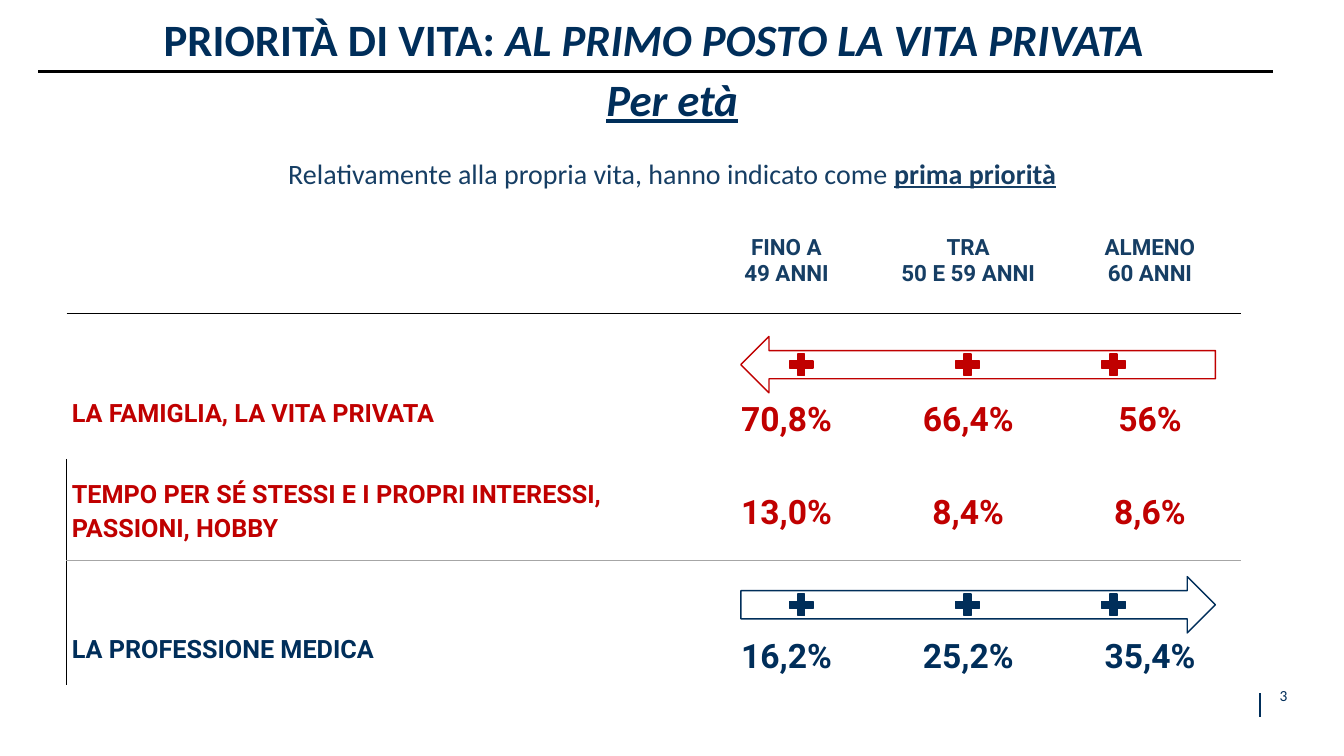
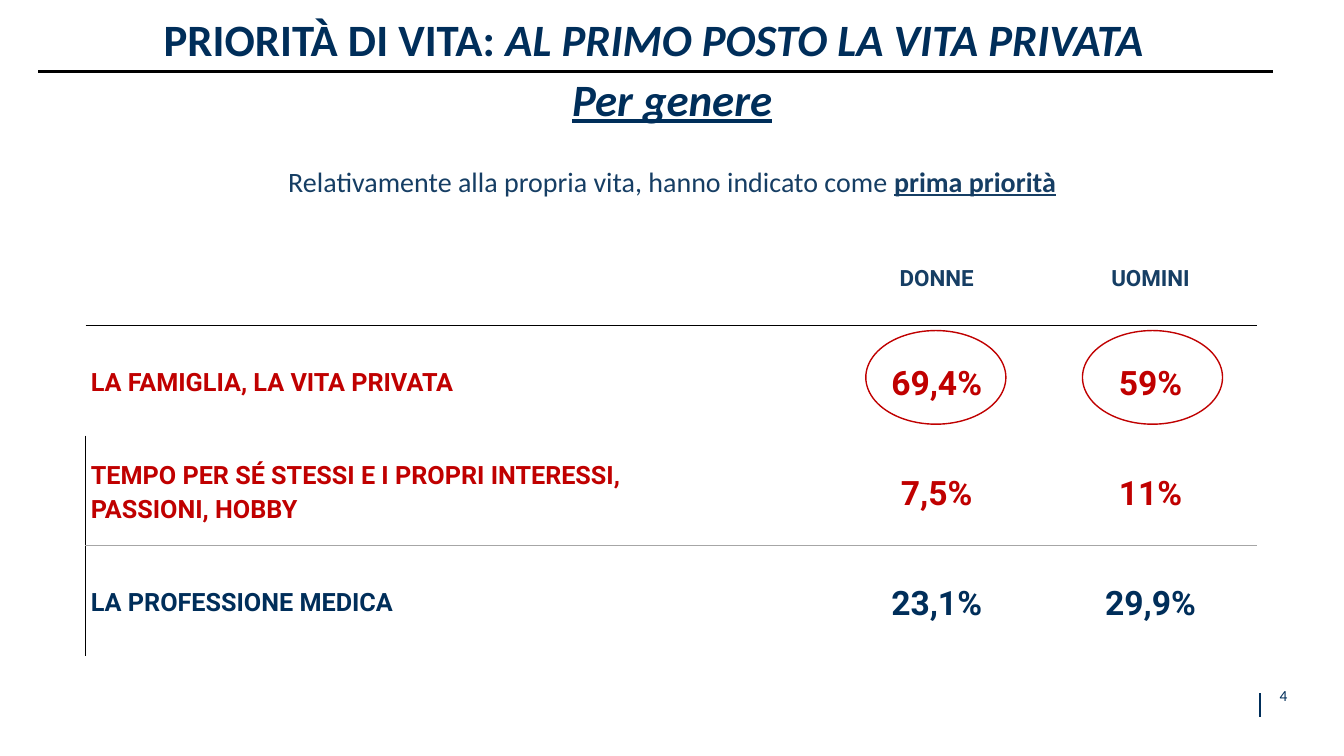
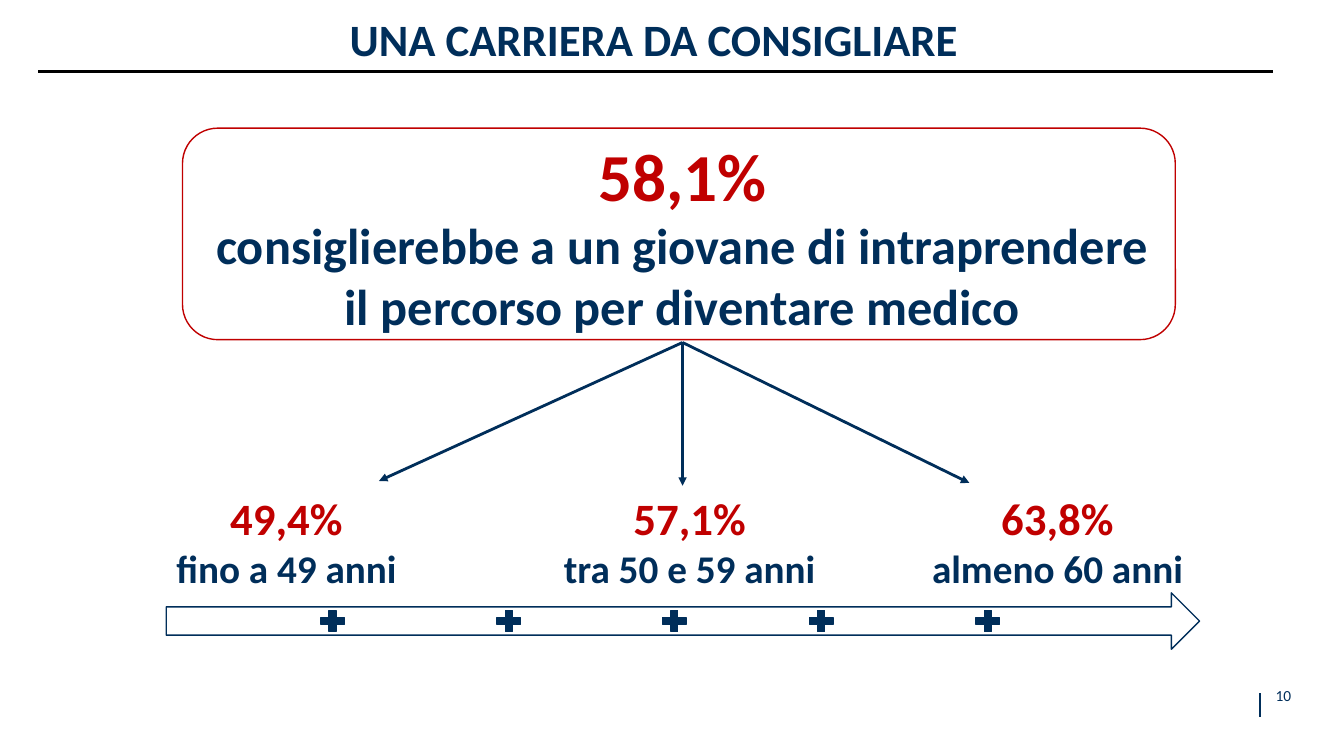
from dataclasses import dataclass

from lxml import etree
from pptx import Presentation
from pptx.dml.color import RGBColor
from pptx.enum import shapes, text
from pptx.oxml import ns
from pptx.util import Cm, Pt


@dataclass(frozen=True)
class Theme:
    navy: str = "002E5A"
    ink: str = "163E64"
    red: str = "C00000"
    black: str = "000000"
    grey: str = "A6A6A6"
    body_font: str = "Calibri"
    table_font: str = "Roboto"
    title: int = 32
    question: int = 20
    header: int = 16
    label: int = 18
    value: int = 24
    headline: int = 48
    statement: int = 36
    age: int = 28
    page: int = 11


T = Theme()
SHAPE = shapes.MSO_SHAPE
ANCHOR = text.MSO_ANCHOR
CENTER = text.PP_ALIGN.CENTER
LEFT = text.PP_ALIGN.LEFT

TITLE_RUNS = (("PRIORITÀ DI VITA: ", {}),
              ("AL PRIMO POSTO LA VITA PRIVATA", {"italic": True}))
QUESTION_RUNS = (("Relativamente alla propria vita, hanno indicato come ", {}),
                 ("prima priorità", {"bold": True, "underline": True}))
PLUS_W, PLUS_H = 0.81, 0.74
ARROW_H = 1.42


def style(font, **attrs):
    for name, value in attrs.items():
        setattr(font, name, value)


def fill_paragraph(p, runs, size, color, align=CENTER, face=T.body_font,
                   spacing=None, **attrs):
    """Write a plain string or (text, font attributes) pairs into p."""
    if isinstance(runs, str):
        p.text = runs
    else:
        for words, run_attrs in runs:
            r = p.add_run()
            r.text = words
            style(r.font, **run_attrs)
    p.alignment = align
    if spacing:
        p.line_spacing = spacing
    style(p.font, name=face, size=Pt(size), **attrs)
    p.font.color.rgb = RGBColor.from_string(color)


def set_borders(cell, **colors):
    """Draw the named sides (L, R, T, B) at 1 pt and hide the others."""
    tc_pr = cell._tc.get_or_add_tcPr()
    for i, side in enumerate("LRTB"):
        ln = etree.Element(ns.qn(f"a:ln{side}"), w=str(Pt(1)))
        if side in colors:
            fill = etree.SubElement(ln, ns.qn("a:solidFill"))
            etree.SubElement(fill, ns.qn("a:srgbClr"), val=colors[side])
        else:
            etree.SubElement(ln, ns.qn("a:noFill"))
        tc_pr.insert(i, ln)


class Deck:
    def __init__(self):
        self.prs = Presentation()
        self.prs.slide_width, self.prs.slide_height = Cm(33.87), Cm(19.05)
        self.s = None

    def new_slide(self, title, page):
        self.s = self.prs.slides.add_slide(self.prs.slide_layouts[5])
        sp = self.s.shapes.title
        sp.left, sp.top, sp.width, sp.height = map(Cm, (0.86, 0.33, 31.24, 1.5))
        tf = sp.text_frame
        tf.auto_size = text.MSO_AUTO_SIZE.NONE
        tf.vertical_anchor = ANCHOR.TOP
        fill_paragraph(tf.paragraphs[0], title, T.title, T.navy,
                       spacing=0.9, bold=True)
        self.line((0.97, 1.8), (32.08, 1.8), T.black)
        self.line((31.75, 18.06), (31.75, 17.45), T.navy, 1.5)
        tf = self.text(31.9, 17.15, 0.89, 0.76, (str(page), T.page, T.navy, {})).text_frame
        tf.word_wrap = False
        tf.vertical_anchor = ANCHOR.BOTTOM
        tf.margin_left = tf.margin_right = tf.margin_top = tf.margin_bottom = Cm(0.15)

    def text(self, x, y, w, h, *paragraphs):
        """Each paragraph is (runs, size, colour, other attributes)."""
        sp = self.s.shapes.add_textbox(Cm(x), Cm(y), Cm(w), Cm(h))
        tf = sp.text_frame
        tf.word_wrap = True
        for i, (runs, size, color, attrs) in enumerate(paragraphs):
            p = tf.add_paragraph() if i else tf.paragraphs[0]
            fill_paragraph(p, runs, size, color, **attrs)
        return sp

    def line(self, start, end, color, width=2, source=None, arrow=False):
        c = self.s.shapes.add_connector(shapes.MSO_CONNECTOR.STRAIGHT,
                                        *map(Cm, start + end))
        if source is not None:
            c.begin_connect(source, 2)
        c.line.color.rgb = RGBColor.from_string(color)
        c.line.width = Pt(width)
        sp_pr = c.element.spPr
        if arrow:
            etree.SubElement(sp_pr.find(ns.qn("a:ln")), ns.qn("a:tailEnd"),
                             type="triangle")
        etree.SubElement(sp_pr, ns.qn("a:effectLst"))

    def shape(self, kind, x, y, w, h, color, filled=False):
        sp = self.s.shapes.add_shape(kind, Cm(x), Cm(y), Cm(w), Cm(h))
        sp.shadow.inherit = False
        if filled:
            sp.fill.solid()
            sp.fill.fore_color.rgb = RGBColor.from_string(color)
        else:
            sp.fill.background()
        sp.line.color.rgb = RGBColor.from_string(color)
        sp.line.width = Pt(1)

    def trend_arrow(self, kind, x, y, w, color, plus_lefts):
        self.shape(kind, x, y, w, ARROW_H, color)
        for left in plus_lefts:
            self.shape(SHAPE.MATH_PLUS, left, y + (ARROW_H - PLUS_H) / 2,
                       PLUS_W, PLUS_H, color, filled=True)

    def priority_intro(self, subtitle, question_top):
        self.text(1.32, 1.83, 31.24, 1.5,
                  (subtitle, T.title, T.navy,
                   {"spacing": 0.9, "bold": True, "italic": True, "underline": True}))
        self.text(2.69, question_top, 28.5, 1.12,
                  (QUESTION_RUNS, T.question, T.ink, {}))

    def priority_table(self, x, y, widths, heights, headers, rows, arrow_rows=()):
        """Rows are (colour, label, values); arrow_rows leave room above the text."""
        table = self.s.shapes.add_table(len(heights), len(widths), Cm(x), Cm(y),
                                        Cm(sum(widths)), Cm(sum(heights))).table
        table.first_row = table.horz_banding = False
        for column, w in zip(table.columns, widths):
            column.width = Cm(w)
        for row, h in zip(table.rows, heights):
            row.height = Cm(h)

        lines = ({"B": T.black}, {"T": T.black}, {"B": T.grey}, {"T": T.grey})
        grid = [(T.ink, "", headers)] + rows
        for i, (color, label, values) in enumerate(grid):
            for j, words in enumerate((label, *values)):
                cell = table.cell(i, j)
                cell.fill.background()
                edge = {"L": T.black} if j == 0 and i > 1 else {}
                set_borders(cell, **lines[i], **edge)
                cell.vertical_anchor = ANCHOR.MIDDLE
                cell.margin_left = cell.margin_right = Cm(0.13)
                cell.margin_top = cell.margin_bottom = 0
                if i in arrow_rows:
                    cell.margin_top = Cm(1.56 if j else 1.27)
                if not words:
                    continue
                size = T.header if i == 0 else T.value if j else T.label
                fill_paragraph(cell.text_frame.paragraphs[0], words, size, color,
                               align=CENTER if j else LEFT, face=T.table_font,
                               spacing=1.15 if i else None, bold=True)


def by_age(deck):
    deck.new_slide(TITLE_RUNS, 3)
    deck.priority_intro("Per età", 3.81)
    deck.priority_table(
        1.68, 5.23, (15.85, 4.58, 4.58, 4.58), (2.67, 3.66, 2.57, 3.12),
        ("FINO A\v49 ANNI", "TRA\v50 E 59 ANNI", "ALMENO\v60 ANNI"),
        [(T.red, "LA FAMIGLIA, LA VITA PRIVATA", ("70,8%", "66,4%", "56%")),
         (T.red, "TEMPO PER SÉ STESSI E I PROPRI INTERESSI, PASSIONI, HOBBY",
          ("13,0%", "8,4%", "8,6%")),
         (T.navy, "LA PROFESSIONE MEDICA", ("16,2%", "25,2%", "35,4%"))],
        arrow_rows=(1, 3))
    for kind, y, color in ((SHAPE.LEFT_ARROW, 8.48, T.red),
                           (SHAPE.RIGHT_ARROW, 14.53, T.navy)):
        deck.trend_arrow(kind, 18.67, y, 11.96, color, (19.79, 23.98, 27.66))


def by_gender(deck):
    deck.new_slide(TITLE_RUNS, 4)
    deck.priority_intro("Per genere", 4.01)
    deck.priority_table(
        2.16, 5.82, (18.75, 5.39, 5.39), (2.39, 2.77, 2.77, 2.77),
        ("DONNE", "UOMINI"),
        [(T.red, "LA FAMIGLIA, LA VITA PRIVATA", ("69,4%", "59%")),
         (T.red, "TEMPO PER SÉ STESSI E I PROPRI INTERESSI,\vPASSIONI, HOBBY",
          ("7,5%", "11%")),
         (T.navy, "LA PROFESSIONE MEDICA", ("23,1%", "29,9%"))])
    for x in (21.82, 27.28):
        deck.shape(SHAPE.OVAL, x, 8.33, 3.53, 2.36, T.red)


def career(deck):
    deck.new_slide("UNA CARRIERA DA CONSIGLIARE", 10)
    bold = {"bold": True}
    box = deck.text(
        4.78, 3.25, 24.84, 5.38,
        ("58,1%", T.headline, T.red, bold),
        ("consiglierebbe a un giovane di intraprendere il percorso per "
         "diventare medico", T.statement, T.navy, bold))
    deck.shape(SHAPE.ROUNDED_RECTANGLE, 4.6, 3.23, 25.02, 5.33, T.red)
    for x, share, age, tip in (
            (3.18, "49,4%", "fino a 49 anni", (9.55, 12.12)),
            (13.34, "57,1%", "tra 50 e 59 anni", (17.2, 12.24)),
            (22.61, "63,8%", "almeno 60 anni", (24.43, 12.17))):
        deck.line((17.2, 8.63), tip, T.navy, source=box, arrow=True)
        deck.text(x, 12.24, 8.08, 2.82, (share, T.title, T.red, bold),
                  (age, T.age, T.navy, bold))
    deck.trend_arrow(SHAPE.RIGHT_ARROW, 4.19, 14.94, 26.04, T.navy,
                     (7.98, 12.42, 16.59, 20.29, 24.49))


def main():
    deck = Deck()
    for build in (by_age, by_gender, career):
        build(deck)
    deck.prs.save("out.pptx")


if __name__ == "__main__":
    main()
